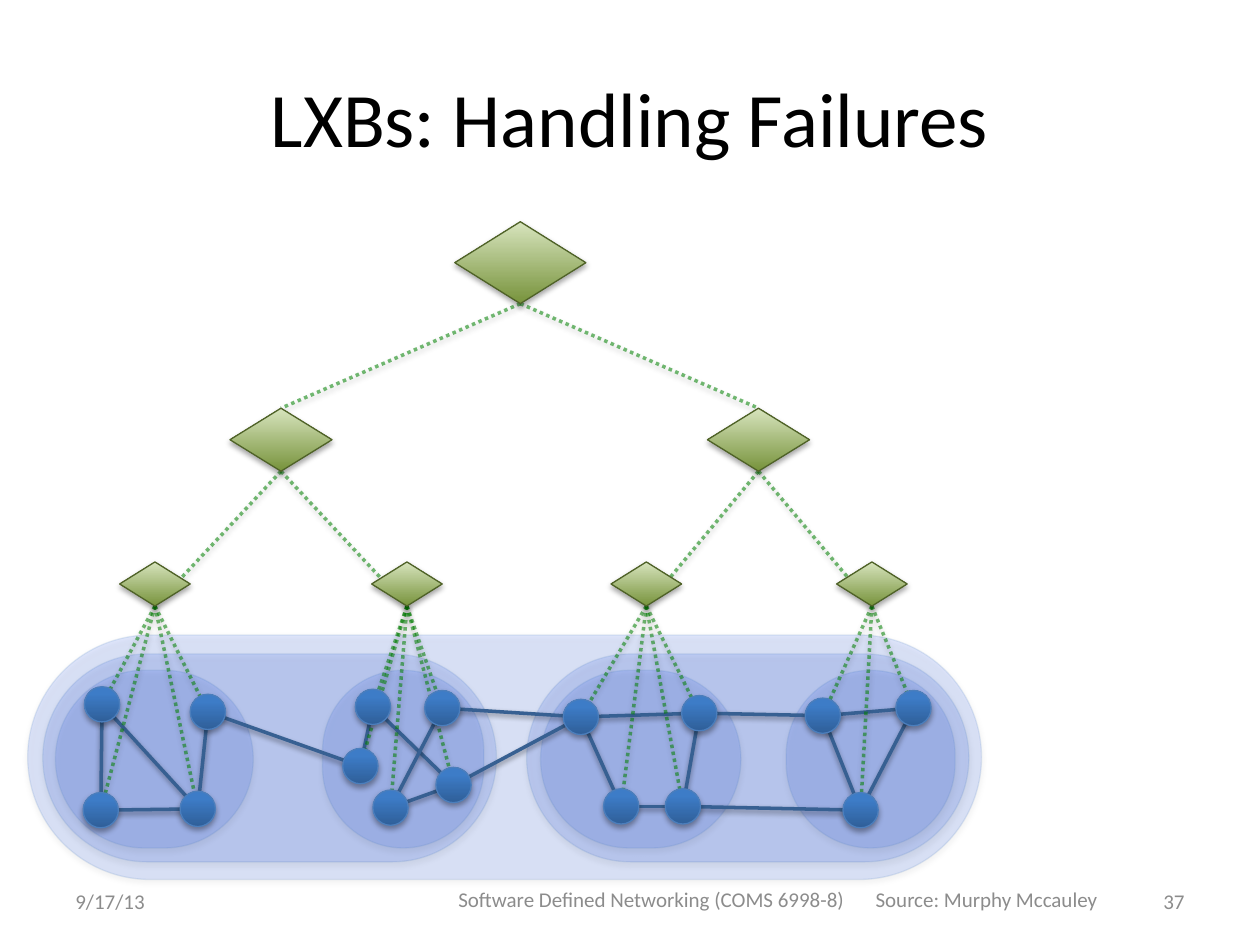
import collections

import lxml.etree
import pptx
import pptx.dml.color
import pptx.enum.dml
import pptx.enum.shapes
import pptx.enum.text
import pptx.oxml.ns
import pptx.util

Box = collections.namedtuple("Box", "left top wide high")
Theme = collections.namedtuple(
    "Theme", "font ink gray zone rim wire link leaf edge host head foot thin thick")

LOOK = Theme(
    font="Calibri", ink="000000", gray="8C8C8C", zone="3366FF", rim="4B7EBC",
    wire="376092", link="008000", leaf=("77933C", "D7E4BD", 1), edge="4F6228",
    host=("2F5F99", "3D7CC7", 0.8), head=44, foot=12, thin=0.75, thick=2)

COLS, ROWS = 100, 75
WIDE, HIGH = pptx.util.Inches(10), pptx.util.Inches(7.5)
SHAPE = pptx.enum.shapes.MSO_SHAPE
ALIGN = pptx.enum.text.PP_ALIGN

ZONES = [
    (0, 19.4, [(0, 75.7)]),
    (1.5, 16.5, [(1.2, 36), (39.6, 35.1)]),
    (2.8, 14.1, [(2.2, 15.7), (23.4, 12.8), (40.7, 15.9), (60.2, 13.4)]),
]
HOSTS = {
    "a1": (5.9, 5.5), "a2": (14.3, 6.1), "a3": (5.8, 13.9), "a4": (13.5, 13.8),
    "b1": (27.4, 5.7), "b2": (32.9, 5.8), "b3": (26.4, 10.4),
    "b4": (28.8, 13.7), "b5": (33.8, 11.9),
    "c1": (43.9, 6.5), "c2": (53.3, 6.2), "c3": (47.1, 13.6), "c4": (52, 13.6),
    "d1": (63.1, 6.4), "d2": (70.3, 5.8), "d3": (66.1, 13.9),
}
WIRES = """a4-a2 a3-a4 a1-a3 a4-a1 a2-b3 b1-b3 b1-b5 b2-b4 b5-b4 b2-c1 b5-c1
c1-c3 c2-c4 c2-c1 c3-c4 d2-d1 d2-d3 d1-d3 c2-d1 d3-c4"""
TIERS = [
    (0, 10.4, 6.5, [31.8]),
    (14.8, 8.1, 5, [12.8, 50.7]),
    (27, 5.6, 3.5, [2.8, 22.8, 41.8, 59.7]),
]
SIDE = 2.8


def col(num):
    return round(WIDE * num / COLS)


def row(num):
    return round(HIGH * num / ROWS)


def place(box):
    return col(box.left), row(box.top), col(box.wide), row(box.high)


def rgb(code):
    return pptx.dml.color.RGBColor.from_string(code)


def sub(node, tag, **vals):
    return lxml.etree.SubElement(node, pptx.oxml.ns.qn(tag), **vals)


def fade(item, share):
    for node in item._element.spPr.iter(pptx.oxml.ns.qn("a:srgbClr")):
        sub(node, "a:alpha", val=str(share * 1000))


def shade(list_, drop, share):
    cast = sub(list_, "a:outerShdw", blurRad="40000", dist=str(drop),
               dir="5400000", rotWithShape="0")
    tint = sub(cast, "a:srgbClr", val="000000")
    sub(tint, "a:alpha", val=str(share * 1000))


def text(slide, words, box, size=LOOK.foot, color=LOOK.gray, align=ALIGN.LEFT):
    frame = slide.shapes.add_textbox(*place(box)).text_frame
    frame.word_wrap = True
    frame.vertical_anchor = pptx.enum.text.MSO_ANCHOR.MIDDLE
    para = frame.paragraphs[0]
    para.text, para.alignment = words, align
    para.font.name, para.font.size = LOOK.font, pptx.util.Pt(size)
    para.font.color.rgb = rgb(color)


def form(slide, kind, box, line, fill=None, blend=None, alpha=None):
    item = slide.shapes.add_shape(kind, *place(box))
    if kind == SHAPE.ROUNDED_RECTANGLE:
        item.adjustments[0] = 0.5
    if blend:
        low, top, stop = blend
        item.fill.gradient()
        item.fill.gradient_angle = 90
        first, last = item.fill.gradient_stops
        first.color.rgb, last.color.rgb = rgb(low), rgb(top)
        first.position, last.position = 0, stop
    else:
        item.fill.solid()
        item.fill.fore_color.rgb = rgb(fill)
    item.line.color.rgb = rgb(line)
    item.line.width = pptx.util.Pt(LOOK.thin)
    if alpha:
        fade(item, alpha)
    item.shadow.inherit = False
    shade(item._element.spPr.find(pptx.oxml.ns.qn("a:effectLst")), 23000, 35)
    return item


def join(group, start, end, color, dots=False):
    item = group.shapes.add_connector(
        pptx.enum.shapes.MSO_CONNECTOR.STRAIGHT, *start, *end)
    item.line.color.rgb = rgb(color)
    item.line.width = pptx.util.Pt(LOOK.thick)
    if dots:
        item.line.dash_style = pptx.enum.dml.MSO_LINE.ROUND_DOT
        fade(item, 54)
    shade(sub(item._element.spPr, "a:effectLst"), 20000, 38)
    return item


def spots(box):
    return {name: (col(box.left + x), row(box.top + y))
            for name, (x, y) in HOSTS.items()}


def zones(slide, box):
    for top, high, spans in ZONES:
        for left, wide in spans:
            part = Box(box.left + left, box.top + top, wide, high)
            form(slide, SHAPE.ROUNDED_RECTANGLE, part, LOOK.rim,
                 fill=LOOK.zone, alpha=14)


def wires(slide, box):
    group, at = slide.shapes.add_group_shape(), spots(box)
    for pair in WIRES.split():
        start, end = pair.split("-")
        join(group, at[start], at[end], LOOK.wire)


def hosts(slide, box):
    for x, y in HOSTS.values():
        part = Box(box.left + x - SIDE / 2, box.top + y - SIDE / 2, SIDE, SIDE)
        form(slide, SHAPE.ROUNDED_RECTANGLE, part, LOOK.rim, blend=LOOK.host)


def port(item, site):
    return item.left + item.width // 2, item.top + item.height * site // 2


def tree(slide, box, ends):
    group = slide.shapes.add_group_shape()
    tiers = [[form(slide, SHAPE.DIAMOND,
                   Box(box.left + mid - wide / 2, box.top + top, wide, high),
                   LOOK.edge, blend=LOOK.leaf) for mid in mids]
             for top, wide, high, mids in TIERS]
    for upper, lower, site in zip(tiers, tiers[1:], (0, 2)):
        for num, child in enumerate(lower):
            head = upper[num // 2]
            link = join(group, port(head, 2), port(child, site), LOOK.link, True)
            link.begin_connect(head, 2)
            link.end_connect(child, site)
    for leaf, mark in zip(tiers[-1], "abcd"):
        for name, end in ends.items():
            if name.startswith(mark):
                link = join(group, port(leaf, 2), end, LOOK.link, True)
                link.begin_connect(leaf, 2)


def title(slide, box):
    text(slide, "LXBs: Handling Failures", box, size=LOOK.head,
         color=LOOK.ink, align=ALIGN.CENTER)


def footer(slide, box):
    for words, left, wide, lift, align in [
            ("9/17/13", 0, 23.3, 0, ALIGN.LEFT),
            ("Software Defined Networking (COMS 6998-8)", 29.2, 35, 0.3, ALIGN.CENTER),
            ("37", 66.7, 23.3, 0, ALIGN.RIGHT),
            ("Source: Murphy Mccauley", 55.8, 35, 0.3, ALIGN.CENTER)]:
        part = Box(box.left + left, box.top - lift, wide, box.high + lift)
        text(slide, words, part, align=align)


def main():
    deck = pptx.Presentation()
    deck.slide_width, deck.slide_height = WIDE, HIGH
    slide = deck.slides.add_slide(deck.slide_layouts[6])
    net = Box(2.2, 50.4, 75.7, 19.4)
    title(slide, Box(5, 3, 90, 12.5))
    zones(slide, net)
    wires(slide, net)
    tree(slide, Box(9.5, 17.6, 62.5, 30.5), spots(net))
    hosts(slide, net)
    footer(slide, Box(5, 69.5, 90, 4))
    deck.save("out.pptx")


if __name__ == "__main__":
    main()
